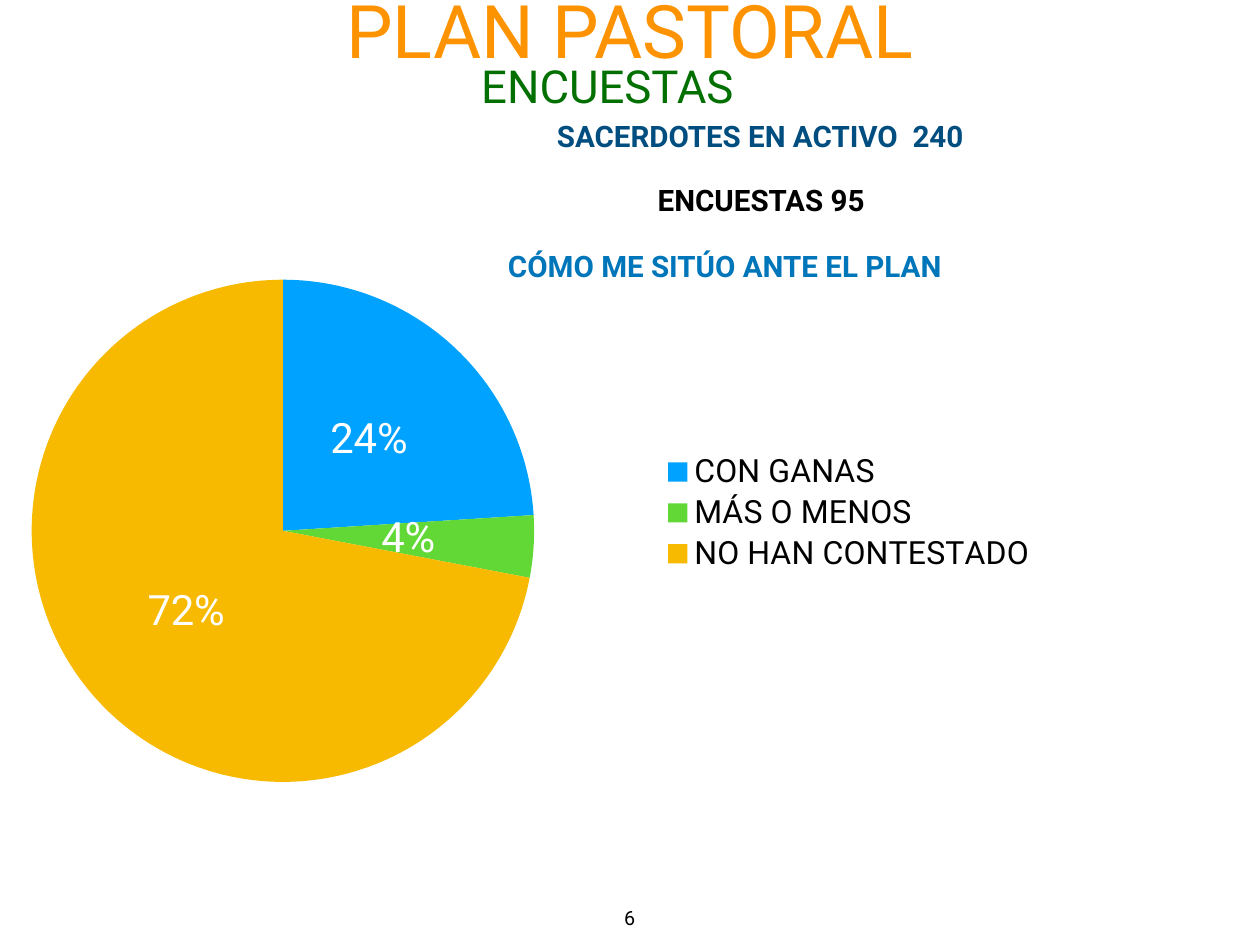
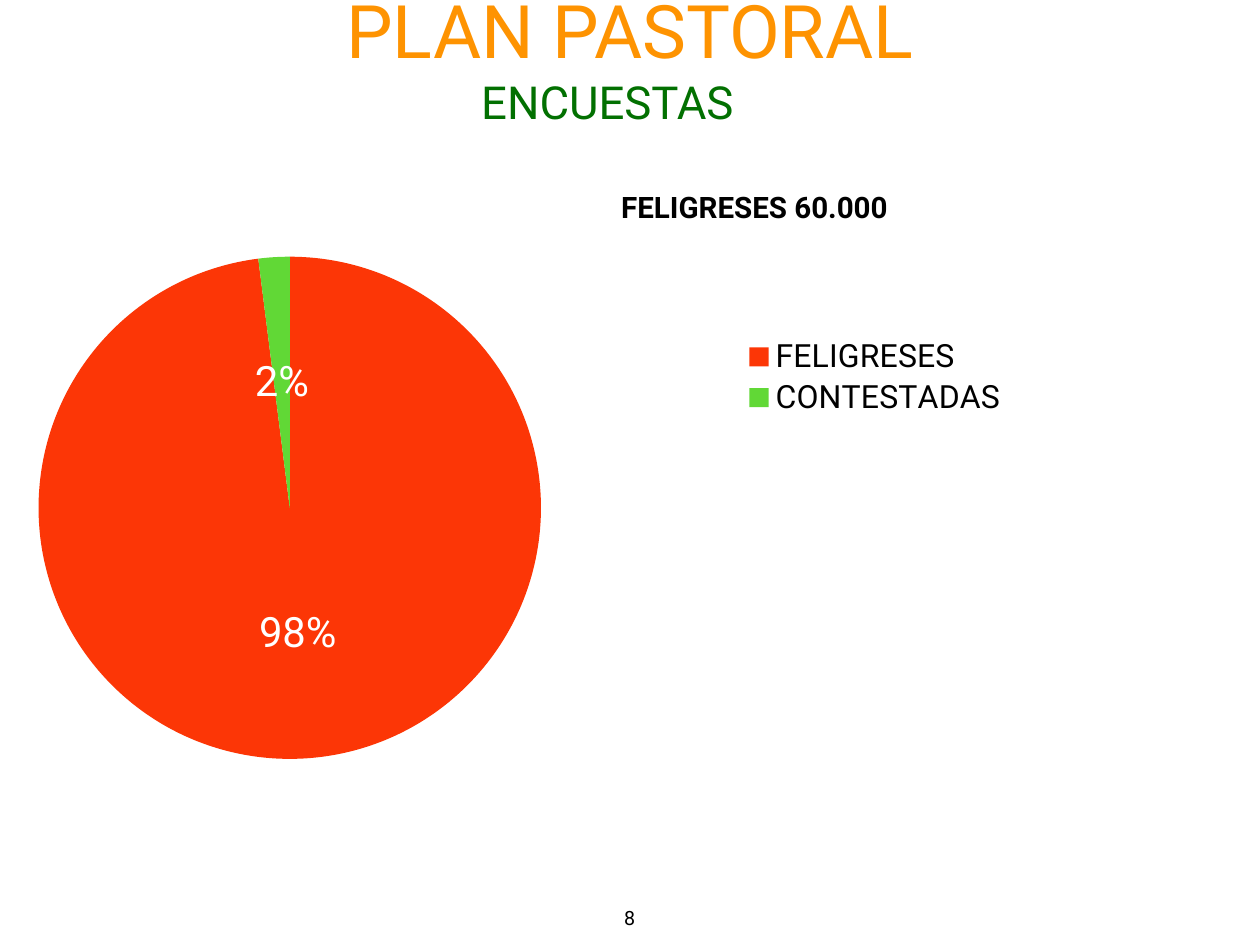
from dataclasses import dataclass

from lxml import etree
from pptx import Presentation
from pptx.chart.data import CategoryChartData
from pptx.dml.color import RGBColor
from pptx.enum.chart import XL_CHART_TYPE as ChartType
from pptx.enum.chart import XL_LABEL_POSITION as LabelPosition
from pptx.enum.chart import XL_LEGEND_POSITION as LegendPosition
from pptx.enum.text import MSO_ANCHOR as Anchor
from pptx.enum.text import PP_ALIGN as Align
from pptx.oxml.ns import qn
from pptx.util import Inches, Pt


@dataclass(frozen=True)
class Theme:
    font: str = "Roboto"
    white: str = "FFFFFF"
    black: str = "000000"
    orange: str = "FE9301"
    dark_green: str = "027001"
    navy: str = "004D80"
    blue: str = "0076BA"
    sky: str = "00A2FF"
    green: str = "61D836"
    amber: str = "F7BA01"
    red: str = "FC3606"
    title: int = 60
    subtitle: int = 37
    share: int = 34
    legend: int = 26
    heading: int = 24
    page: int = 16
    inset: float = 0.06


THEME = Theme()
SLIDE_SIZE = (14.22, 10.67)
TITLE_BOX = (1.39, -0.9, 11.44, 1.79)
PAGE_BOX = (6.98, 10.17, 0.25, 0.35)
SUBTITLE_LEFT, SUBTITLE_SIZE = 4.53, (4.65, 0.85)
HEADING_HEIGHT = 0.5

# Headings: text, colour, left, top, width. Legend box: in inches on the slide.
SURVEYS = [
    {
        "page": "6",
        "subtitle_top": 0.6,
        "headings": [
            ("SACERDOTES EN ACTIVO  240", THEME.navy, 5.96, 1.28, 5.24),
            ("ENCUESTAS 95", THEME.black, 7.29, 2.01, 2.6),
            ("CÓMO ME SITÚO ANTE EL PLAN", THEME.blue, 5.48, 2.75, 5.4),
        ],
        "chart_box": (0.27, 3.13, 11.93, 5.74),
        "plot_width": 0.48,
        "legend_box": (7.33, 5.08, 4.5, 1.42),
        "slices": [
            ("CON GANAS", 24, THEME.sky),
            ("MÁS O MENOS", 4, THEME.green),
            ("NO HAN CONTESTADO", 72, THEME.amber),
        ],
    },
    {
        "page": "8",
        "subtitle_top": 0.78,
        "headings": [("FELIGRESES 60.000", THEME.black, 6.86, 2.08, 3.31)],
        "chart_box": (0.33, 2.87, 11.31, 5.74),
        "plot_width": 0.51,
        "legend_box": (8.22, 3.78, 3.3, 0.95),
        "slices": [
            ("FELIGRESES", 98, THEME.red),
            ("CONTESTADAS", 2, THEME.green),
        ],
    },
]


def set_font(font, size, color, bold=False):
    values = {"name": THEME.font, "size": Pt(size), "bold": bold}
    for attribute, value in values.items():
        setattr(font, attribute, value)
    font.color.rgb = RGBColor.from_string(color)


def add_text(slide, box, text, size, color, bold=False, anchor=Anchor.TOP, wrap=True):
    label = slide.shapes.add_textbox(*map(Inches, box))
    frame = label.text_frame
    for side in ("left", "top", "right", "bottom"):
        setattr(frame, f"margin_{side}", Inches(THEME.inset))
    frame.word_wrap = wrap
    frame.vertical_anchor = anchor
    paragraph = frame.paragraphs[0]
    paragraph.alignment = Align.CENTER
    run = paragraph.add_run()
    run.text = text
    set_font(run.font, size, color, bold)
    return label


def make_layout(x, y, width, height, inner=False):
    """Return a manual chart layout, in fractions of the chart's box."""
    layout = etree.Element(qn("c:layout"))
    manual = etree.SubElement(layout, qn("c:manualLayout"))
    values = {"layoutTarget": "inner"} if inner else {}
    values |= {"xMode": "edge", "yMode": "edge", "x": x, "y": y, "w": width, "h": height}
    for tag, value in values.items():
        etree.SubElement(manual, qn(f"c:{tag}")).set("val", str(value))
    return layout


def place_plot(chart, width):
    plot_area = chart.element.find(f".//{qn('c:plotArea')}")
    for old_layout in plot_area.findall(qn("c:layout")):
        plot_area.remove(old_layout)
    plot_area.insert(0, make_layout(0.005, 0.005, width, 0.988, inner=True))


def add_legend(chart, chart_box, legend_box):
    chart.has_legend = True
    legend = chart.legend
    legend.position = LegendPosition.RIGHT
    legend.include_in_layout = True
    set_font(legend.font, THEME.legend, THEME.black)
    left, top, width, height = chart_box
    x, y, legend_width, legend_height = legend_box
    element = chart.element.find(f".//{qn('c:legend')}")
    for old_layout in element.findall(qn("c:layout")):
        element.remove(old_layout)
    element.find(qn("c:legendPos")).addnext(make_layout(
        round((x - left) / width, 3), round((y - top) / height, 3),
        round(legend_width / width, 3), round(legend_height / height, 3)))


def add_pie(slide, chart_box, plot_width, legend_box, slices):
    names, shares, colors = zip(*slices)
    data = CategoryChartData()
    data.categories = names
    data.add_series("Series 1", shares)
    chart = slide.shapes.add_chart(ChartType.PIE, *map(Inches, chart_box), data).chart
    chart.has_title = False
    plot = chart.plots[0]
    plot.vary_by_categories = True
    for index, color in enumerate(colors):
        point = plot.series[0].points[index]
        point.format.fill.solid()
        point.format.fill.fore_color.rgb = RGBColor.from_string(color)
        point.format.line.fill.background()
    plot.has_data_labels = True
    labels = plot.data_labels
    label_format = {
        "show_percentage": True, "show_value": False,
        "number_format": "#,##0%", "number_format_is_linked": False,
        "position": LabelPosition.CENTER,
    }
    for attribute, value in label_format.items():
        setattr(labels, attribute, value)
    set_font(labels.font, THEME.share, THEME.white)
    place_plot(chart, plot_width)
    add_legend(chart, chart_box, legend_box)


def add_frame(slide, page, subtitle_top):
    """Add the title, subtitle and page number that every slide has."""
    title = add_text(slide, TITLE_BOX, "PLAN PASTORAL", THEME.title, THEME.orange,
                     anchor=Anchor.BOTTOM)
    title.fill.solid()
    title.fill.fore_color.rgb = RGBColor.from_string(THEME.white)
    add_text(slide, (SUBTITLE_LEFT, subtitle_top, *SUBTITLE_SIZE), "ENCUESTAS",
             THEME.subtitle, THEME.dark_green)
    add_text(slide, PAGE_BOX, page, THEME.page, THEME.black, wrap=False)


def add_survey_slide(deck, survey):
    slide = deck.slides.add_slide(deck.slide_layouts[6])
    add_pie(slide, survey["chart_box"], survey["plot_width"],
            survey["legend_box"], survey["slices"])
    add_frame(slide, survey["page"], survey["subtitle_top"])
    for text, color, left, top, width in survey["headings"]:
        add_text(slide, (left, top, width, HEADING_HEIGHT), text, THEME.heading, color,
                 bold=True, anchor=Anchor.MIDDLE, wrap=False)


def main():
    deck = Presentation()
    deck.slide_width, deck.slide_height = map(Inches, SLIDE_SIZE)
    for survey in SURVEYS:
        add_survey_slide(deck, survey)
    deck.save("out.pptx")


if __name__ == "__main__":
    main()
